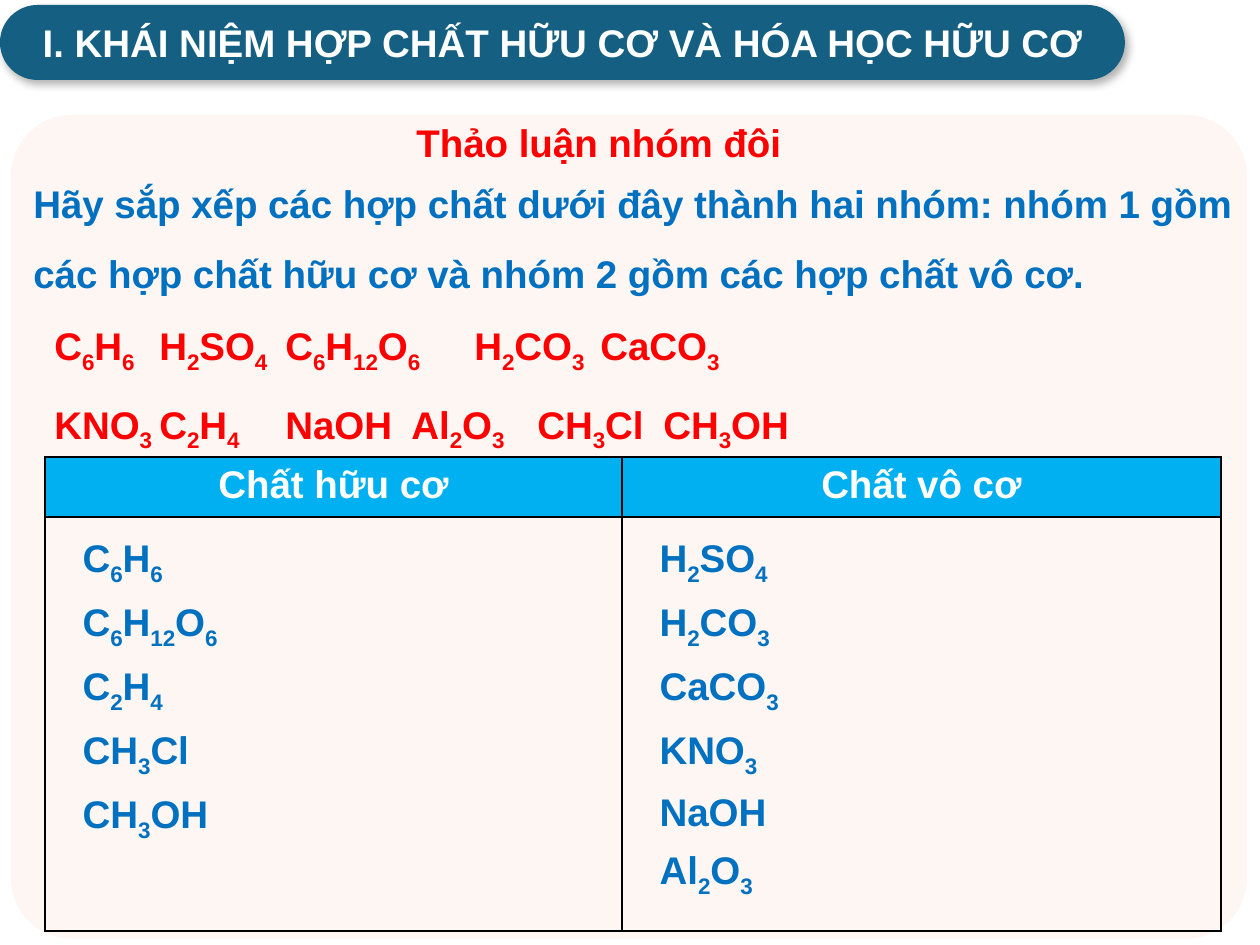
from itertools import groupby

from lxml.etree import SubElement
from pptx import Presentation
from pptx.dml.color import RGBColor
from pptx.enum.shapes import MSO_SHAPE as Shape
from pptx.enum.text import MSO_ANCHOR as Anchor, PP_ALIGN as Align
from pptx.oxml.ns import qn
from pptx.util import Pt

PX = 914400 // 126
COLORS = {"banner": "156082", "panel": "FBE3D6", "header": "00B0F0", "white": "FFFFFF",
          "red": "FF0000", "blue": "0070C0", "black": "000000"}

TITLE = "I. KHÁI NIỆM HỢP CHẤT HỮU CƠ VÀ HÓA HỌC HỮU CƠ"
ACTIVITY = "Thảo luận nhóm đôi"
TASK = ("Hãy sắp xếp các hợp chất dưới đây thành hai nhóm: nhóm 1 gồm "
        "các hợp chất hữu cơ và nhóm 2 gồm các hợp chất vô cơ.")
COMPOUNDS = [
    ["C6H6", "H2SO4", "C6H12O6", "H2CO3", "CaCO3"],
    ["KNO3", "C2H4", "NaOH", "Al2O3", "CH3Cl", "CH3OH"],
]
COMPOUND_TABS = [189, 378, 630, 819, 1008]
GROUPS = {
    "Chất hữu cơ": ["C6H6", "C6H12O6", "C2H4", "CH3Cl", "CH3OH"],
    "Chất vô cơ": ["H2SO4", "H2CO3", "CaCO3", "KNO3", "NaOH", "Al2O3"],
}
COLUMN_WIDTHS = [577, 599]
ROW_HEIGHTS = [60, 414]


def box(*lengths):
    return [length * PX for length in lengths]


def color(name):
    return RGBColor.from_string(COLORS[name])


def add_run(paragraph, text, color_name):
    run = paragraph.add_run()
    run.text = text
    font = run.font
    font.name, font.size, font.bold = "Arial", Pt(22), True
    font.color.rgb = color(color_name)
    return run


def add_formulas(paragraph, text, color_name, indent, spacing):
    """Write chemical formulas, with every digit as a subscript."""
    paragraph.line_spacing = spacing
    properties = paragraph._p.get_or_add_pPr()
    properties.set("marL", "0")
    properties.set("indent", str(indent * PX))
    for is_digit, letters in groupby(text, str.isdigit):
        run = add_run(paragraph, "".join(letters), color_name)
        if is_digit:
            run._r.get_or_add_rPr().set("baseline", "-25000")


def add_tabs(paragraph, positions):
    tabs = SubElement(paragraph._p.get_or_add_pPr(), qn("a:tabLst"))
    for position in positions:
        SubElement(tabs, qn("a:tab"), pos=str(position * PX), algn="l")


def add_color(parent, name, alpha):
    tint = SubElement(parent, qn("a:srgbClr"), val=COLORS[name])
    SubElement(tint, qn("a:alpha"), val=str(alpha * 1000))


def add_rounded(slide, place, radius, fill):
    shape = slide.shapes.add_shape(Shape.ROUNDED_RECTANGLE, *box(*place))
    shape.adjustments[0] = radius
    shape.shadow.inherit = False
    shape.fill.solid()
    shape.fill.fore_color.rgb = color(fill)
    shape.line.fill.background()
    return shape


def add_banner(slide):
    banner = add_rounded(slide, (0, 5, 1125, 75), 0.5, "banner")
    effects = banner._element.spPr.find(qn("a:effectLst"))
    shadow = SubElement(effects, qn("a:outerShdw"), blurRad=str(Pt(4.5)), dist=str(Pt(2.6)),
                        dir=str(53 * 60000), algn="tl", rotWithShape="0")
    add_color(shadow, "black", 30)
    banner.text_frame.vertical_anchor = Anchor.MIDDLE
    paragraph = banner.text_frame.paragraphs[0]
    paragraph.alignment = Align.CENTER
    add_run(paragraph, TITLE, "white")


def add_panel(slide):
    panel = add_rounded(slide, (11, 115, 1236, 824), 0.074, "panel")
    fill = panel._element.spPr.find(qn("a:solidFill"))
    fill.clear()
    add_color(fill, "panel", 31)


def add_task(slide):
    activity = slide.shapes.add_textbox(*box(404, 113, 396, 59)).text_frame
    activity.word_wrap = False
    add_run(activity.paragraphs[0], ACTIVITY, "red")

    task = slide.shapes.add_textbox(*box(21, 151, 1235, 284)).text_frame
    task.word_wrap = True
    task.paragraphs[0].line_spacing = 1.5
    add_run(task.paragraphs[0], TASK, "blue")
    for formulas in COMPOUNDS:
        paragraph = task.add_paragraph()
        add_formulas(paragraph, "\t".join(formulas), "red", 21, 1.5)
        add_tabs(paragraph, COMPOUND_TABS)


def add_borders(cell):
    properties = cell._tc.get_or_add_tcPr()
    for index, side in enumerate(("lnL", "lnR", "lnT", "lnB")):
        line = SubElement(properties, qn(f"a:{side}"), w=str(Pt(1)))
        fill = SubElement(line, qn("a:solidFill"))
        SubElement(fill, qn("a:srgbClr"), val=COLORS["black"])
        properties.insert(index, line)


def add_group_table(slide):
    place = box(45, 457, sum(COLUMN_WIDTHS), sum(ROW_HEIGHTS))
    table = slide.shapes.add_table(2, len(GROUPS), *place).table
    for row, height in zip(table.rows, ROW_HEIGHTS):
        row.height = height * PX
    for index, (name, formulas) in enumerate(GROUPS.items()):
        table.columns[index].width = COLUMN_WIDTHS[index] * PX
        header, body = table.cell(0, index), table.cell(1, index)
        header.fill.solid()
        header.fill.fore_color.rgb = color("header")
        body.fill.background()
        heading = header.text_frame.paragraphs[0]
        heading.alignment = Align.CENTER
        add_run(heading, name, "white")
        frame = body.text_frame
        for number, formula in enumerate(formulas):
            paragraph = frame.add_paragraph() if number else frame.paragraphs[0]
            add_formulas(paragraph, formula, "blue", 25, 1.3)
        for cell in (header, body):
            add_borders(cell)


def main():
    presentation = Presentation()
    presentation.slide_width, presentation.slide_height = box(1260, 945)
    slide = presentation.slides.add_slide(presentation.slide_layouts[6])
    add_banner(slide)
    add_panel(slide)
    add_task(slide)
    add_group_table(slide)
    presentation.save("out.pptx")


if __name__ == "__main__":
    main()
